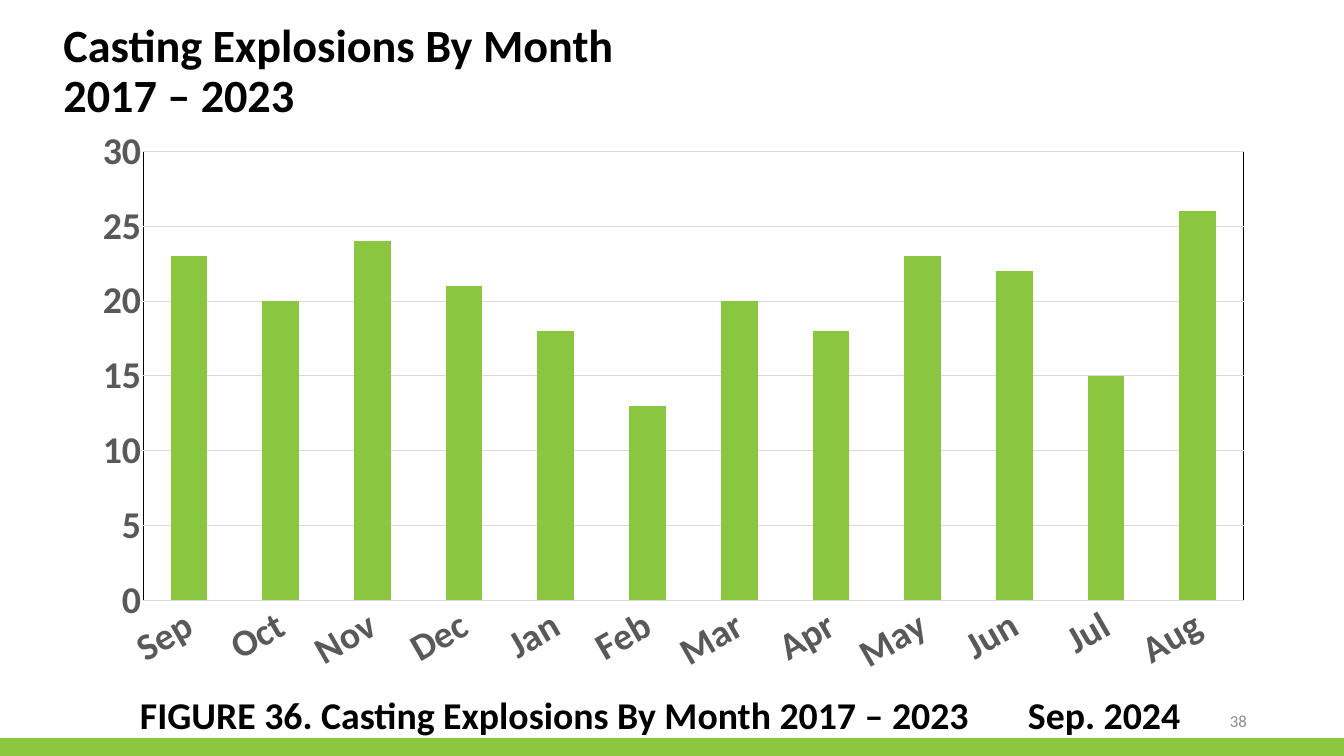
from lxml import etree
from pptx import Presentation
from pptx import util as u
from pptx.chart.data import CategoryChartData
from pptx.dml.color import RGBColor
from pptx.enum import chart as ch, shapes, text
from pptx.oxml import parse_xml
from pptx.oxml.ns import nsdecls, qn

COLORS = {"green": "8BC641", "black": "000000", "axis": "595959",
          "grid": "D9D9D9", "number": "8C8C8C"}
FONT = "Calibri"
WIDTH, HEIGHT, BAND = 26.67, 15, 0.36

TITLE = ["Casting Explosions By Month", "2017 – 2023"]
CAPTION = ["FIGURE 36. Casting Explosions By Month 2017 – 2023\tSep. 2024"]
PAGE = ["38"]
EXPLOSIONS = {"Sep": 23, "Oct": 20, "Nov": 24, "Dec": 21, "Jan": 18, "Feb": 13,
              "Mar": 20, "Apr": 18, "May": 23, "Jun": 22, "Jul": 15, "Aug": 26}
CHART_BOX = (1.57, 2.31, 23.59, 11.35)
PLOT = (2.84, 3.0, 21.84, 8.91)


def rgb(name):
    return RGBColor.from_string(COLORS[name])


def set_font(font, size, color, bold=False):
    font.name, font.size, font.bold = FONT, u.Pt(size), bold
    font.color.rgb = rgb(color)


def add_text(slide, box, lines, size, color="black", bold=True, spacing=0.9,
             align=text.PP_ALIGN.LEFT, anchor=text.MSO_ANCHOR.TOP, tab=None):
    frame = slide.shapes.add_textbox(*map(u.Inches, box)).text_frame
    frame.word_wrap = True
    frame.vertical_anchor = anchor
    for i, line in enumerate(lines):
        para = frame.add_paragraph() if i else frame.paragraphs[0]
        para.alignment, para.line_spacing = align, spacing
        if tab:
            tabs = etree.SubElement(para._p.get_or_add_pPr(), qn("a:tabLst"))
            etree.SubElement(tabs, qn("a:tab"), pos=str(u.Inches(tab)), algn="l")
        run = para.add_run()
        run.text = line
        set_font(run.font, size, color, bold)


def frame_plot(chart):
    """Fix the inner plot area in place and give it a black border."""
    left, top, width, height = CHART_BOX
    fractions = {"x": (PLOT[0] - left) / width, "y": (PLOT[1] - top) / height,
                 "w": PLOT[2] / width, "h": PLOT[3] / height}
    places = "".join(f'<c:{k}Mode val="edge"/>' for k in "xy")
    places += "".join(f'<c:{k} val="{v:.4f}"/>' for k, v in fractions.items())
    area = chart._chartSpace.chart.plotArea
    for old in area.findall(qn("c:layout")):
        area.remove(old)
    area.insert(0, parse_xml(
        f'<c:layout {nsdecls("c")}><c:manualLayout><c:layoutTarget val="inner"/>'
        f'{places}</c:manualLayout></c:layout>'))
    area.append(parse_xml(
        f'<c:spPr {nsdecls("c", "a")}><a:noFill/><a:ln w="{u.Pt(1.5)}"><a:solidFill>'
        f'<a:srgbClr val="{COLORS["black"]}"/></a:solidFill></a:ln></c:spPr>'))


def add_month_chart(slide):
    data = CategoryChartData()
    data.categories = list(EXPLOSIONS)
    data.add_series("Series 1", list(EXPLOSIONS.values()))
    chart = slide.shapes.add_chart(ch.XL_CHART_TYPE.COLUMN_CLUSTERED,
                                   *map(u.Inches, CHART_BOX), data).chart
    chart.has_legend = chart.has_title = False
    set_font(chart.font, 10, "black")

    plot = chart.plots[0]
    plot.gap_width, plot.overlap, plot.vary_by_categories = 150, -27, False
    bars = plot.series[0].format.fill
    bars.solid()
    bars.fore_color.rgb = rgb("green")

    months, counts = chart.category_axis, chart.value_axis
    for axis in (months, counts):
        set_font(axis.tick_labels.font, 54, "axis", True)
        axis.major_tick_mark = axis.minor_tick_mark = ch.XL_TICK_MARK.NONE
    counts.minimum_scale, counts.maximum_scale, counts.major_unit = 0, 30, 5
    counts.format.line.fill.background()
    for line in (months.format.line, counts.major_gridlines.format.line):
        line.color.rgb, line.width = rgb("grid"), u.Pt(0.75)
    slant = months._element.find(qn("c:txPr")).find(qn("a:bodyPr"))
    slant.set("rot", str(-30 * 60000))
    slant.set("vert", "horz")
    frame_plot(chart)


def main():
    deck = Presentation()
    deck.slide_width, deck.slide_height = u.Inches(WIDTH), u.Inches(HEIGHT)
    slide = deck.slides.add_slide(deck.slide_layouts[6])

    band = slide.shapes.add_shape(shapes.MSO_SHAPE.RECTANGLE, *map(
        u.Inches, (0, HEIGHT - BAND, WIDTH, BAND)))
    band.shadow.inherit = False
    band.fill.solid()
    band.fill.fore_color.rgb = rgb("green")
    band.line.fill.background()

    add_text(slide, (18.84, 13.9, 6, 0.8), PAGE, 24, "number", bold=False, spacing=1,
             align=text.PP_ALIGN.RIGHT, anchor=text.MSO_ANCHOR.MIDDLE)
    add_text(slide, (1.16, 0.4, 18.8, 1.39), TITLE, 66)
    add_text(slide, (2.68, 13.78, 20.96, 1.2), CAPTION, 54, tab=17.62)
    add_month_chart(slide)
    deck.save("out.pptx")


if __name__ == "__main__":
    main()
